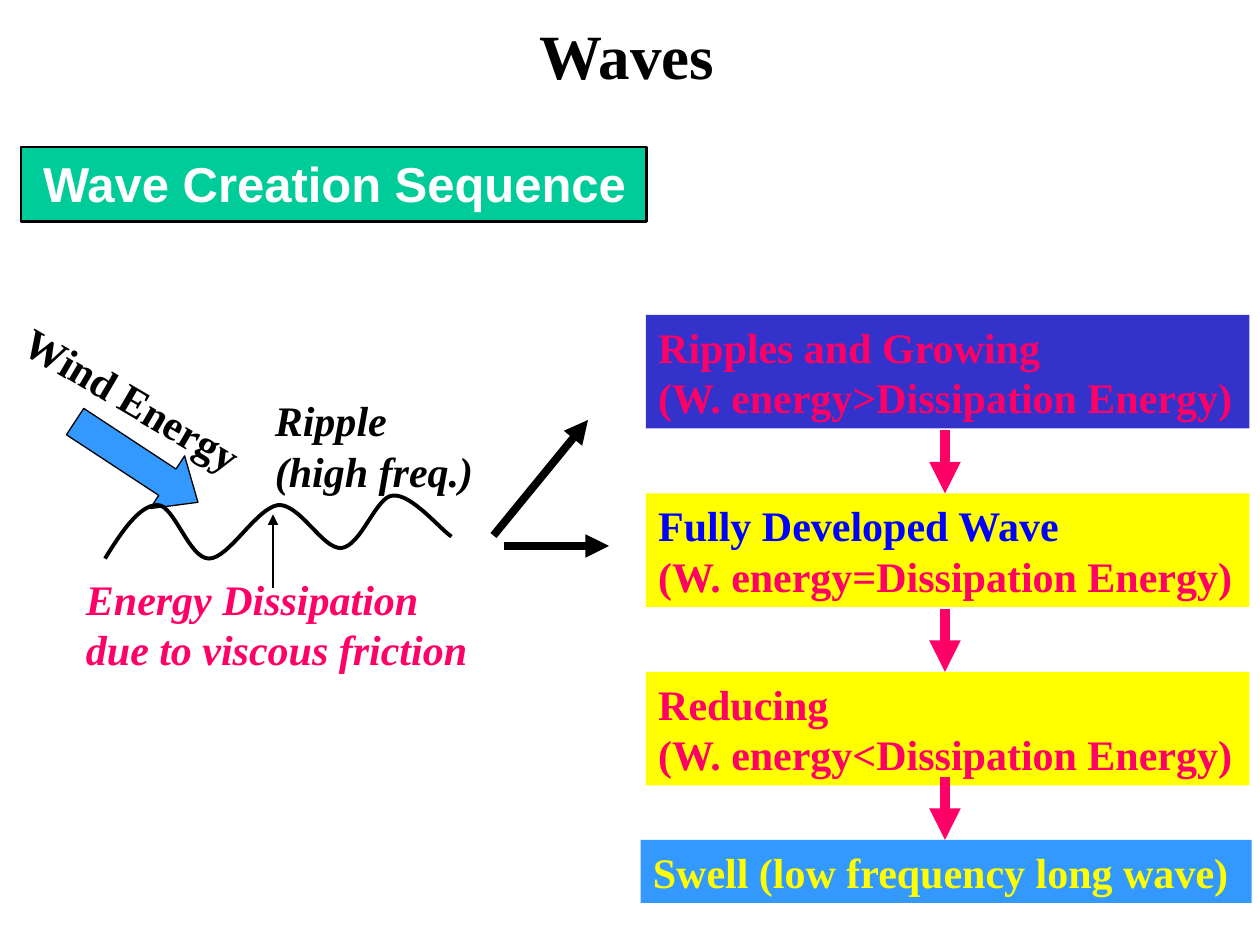
"""Build the slide on how wind makes waves."""
from lxml.etree import SubElement
from pptx import Presentation
from pptx.dml.color import RGBColor
from pptx.enum.shapes import MSO_CONNECTOR, MSO_SHAPE
from pptx.enum.text import MSO_ANCHOR, MSO_AUTO_SIZE, PP_ALIGN
from pptx.oxml.ns import qn
from pptx.util import Pt

PX = 7620
BLACK = RGBColor(0x00, 0x00, 0x00)
WHITE = RGBColor(0xFF, 0xFF, 0xFF)
GREEN = RGBColor(0x00, 0xCC, 0x99)
SKY = RGBColor(0x33, 0x99, 0xFF)
NAVY = RGBColor(0x33, 0x33, 0xCC)
BLUE = RGBColor(0x00, 0x00, 0xFF)
PINK = RGBColor(0xFF, 0x00, 0x66)
YELLOW = RGBColor(0xFF, 0xFF, 0x00)


def emu(*nums):
    return [round(num * PX) for num in nums]


def write(shape, text, hues=(BLACK,), size=24, font="Times New Roman",
          slant=False, align=PP_ALIGN.LEFT, inset=12):
    frame = shape.text_frame
    frame.word_wrap = False
    frame.auto_size = MSO_AUTO_SIZE.NONE
    frame.vertical_anchor = MSO_ANCHOR.TOP
    frame.margin_left = inset * PX
    for i, line in enumerate(text.split("\n")):
        para = frame.add_paragraph() if i else frame.paragraphs[0]
        para.alignment = align
        run = para.add_run()
        run.text = line
        run.font.name = font
        run.font.size = Pt(size)
        run.font.bold = True
        run.font.italic = slant
        run.font.color.rgb = hues[min(i, len(hues) - 1)]


class Page:
    def __init__(self, deck):
        self.slide = deck.slides.add_slide(deck.slide_layouts[5])
        self.shapes = self.slide.shapes

    def title(self, spot, text):
        head = self.shapes.title
        head.left, head.top, head.width, head.height = emu(*spot)
        write(head, text, size=36, align=PP_ALIGN.CENTER)

    def shape(self, kind, spot, fill, edge=0, turn=0):
        item = self.shapes.add_shape(kind, *emu(*spot))
        item.shadow.inherit = False
        item.rotation = turn
        item.fill.solid()
        item.fill.fore_color.rgb = fill
        if edge:
            item.line.color.rgb = BLACK
            item.line.width = Pt(edge)
        else:
            item.line.fill.background()
        return item

    def box(self, spot, text, fill, edge=0, **style):
        write(self.shape(MSO_SHAPE.RECTANGLE, spot, fill, edge), text, **style)

    def label(self, spot, text, turn=0, **style):
        item = self.shapes.add_textbox(*emu(*spot))
        item.rotation = turn
        write(item, text, **style)

    def arrow(self, ends, width, hue=BLACK):
        line = self.shapes.add_connector(MSO_CONNECTOR.STRAIGHT, *emu(*ends))
        line.line.color.rgb = hue
        line.line.width = Pt(width)
        SubElement(line.line._get_or_add_ln(), qn("a:tailEnd"), type="triangle")
        SubElement(line._element.spPr, qn("a:effectLst"))

    def curve(self, start, bends, width, steps=16):
        dots, last = [], start
        for bend in bends:
            knots = [last, bend[:2], bend[2:4], bend[4:]]
            for step in range(1, steps + 1):
                t = step / steps
                parts = ((1 - t) ** 3, 3 * t * (1 - t) ** 2, 3 * t * t * (1 - t), t ** 3)
                dots.append(emu(*(sum(p * k[axis] for p, k in zip(parts, knots))
                                  for axis in (0, 1))))
            last = bend[4:]
        path = self.shapes.build_freeform(*emu(*start))
        path.add_line_segments(dots, close=False)
        item = path.convert_to_shape()
        item.shadow.inherit = False
        item.fill.background()
        item.line.color.rgb = BLACK
        item.line.width = Pt(width)


def main():
    deck = Presentation()
    deck.slide_width, deck.slide_height = emu(1200, 900)
    page = Page(deck)
    page.title((500, 10, 194, 84), "Waves")
    page.box((20, 140, 596, 71), "Wave Creation Sequence", GREEN, edge=1.5,
             hues=[WHITE], size=28, font="Arial", inset=21)

    wind = page.shape(MSO_SHAPE.RIGHT_ARROW, (60, 410, 140, 60), SKY, 0.75, 33.3)
    wind.adjustments[0] = 0.5
    wind.adjustments[1] = 0.58
    page.label((0, 350, 254, 60), "Wind Energy", turn=30.4)
    page.label((70, 540, 388, 108), "Energy Dissipation\ndue to viscous friction",
               hues=[PINK], slant=True)
    page.curve((100, 532), [
        (116, 506, 133, 481, 150, 481),
        (166, 481, 180, 532, 199, 532),
        (218, 532, 244, 484, 265, 481),
        (286, 480, 307, 523, 325, 522),
        (344, 520, 358, 473, 374, 472),
        (392, 470, 420, 505, 430, 511),
    ], 2.25)
    page.label((250, 370, 214, 108), "Ripple\n(high freq.)", slant=True)
    page.arrow((480, 520, 580, 520), 4.5)
    page.arrow((470, 510, 560, 400), 4.5)
    page.arrow((260, 560, 260, 490), 0.75)

    stages = [
        ("Ripples and Growing", ">", NAVY, PINK),
        ("Fully Developed Wave", "=", YELLOW, BLUE),
        ("Reducing", "<", YELLOW, PINK),
    ]
    for i, (name, sign, fill, hue) in enumerate(stages):
        page.box((615, 300 + 170 * i, 575, 108),
                 f"{name}\n(W. energy{sign}Dissipation Energy)", fill, hues=[hue, PINK])
    page.box((610, 800, 582, 60), "Swell (low frequency long wave)", SKY, hues=[YELLOW])
    for top in (410, 580, 740):
        page.arrow((900, top, 900, top + 60), 6, PINK)
    deck.save("out.pptx")


if __name__ == "__main__":
    main()
